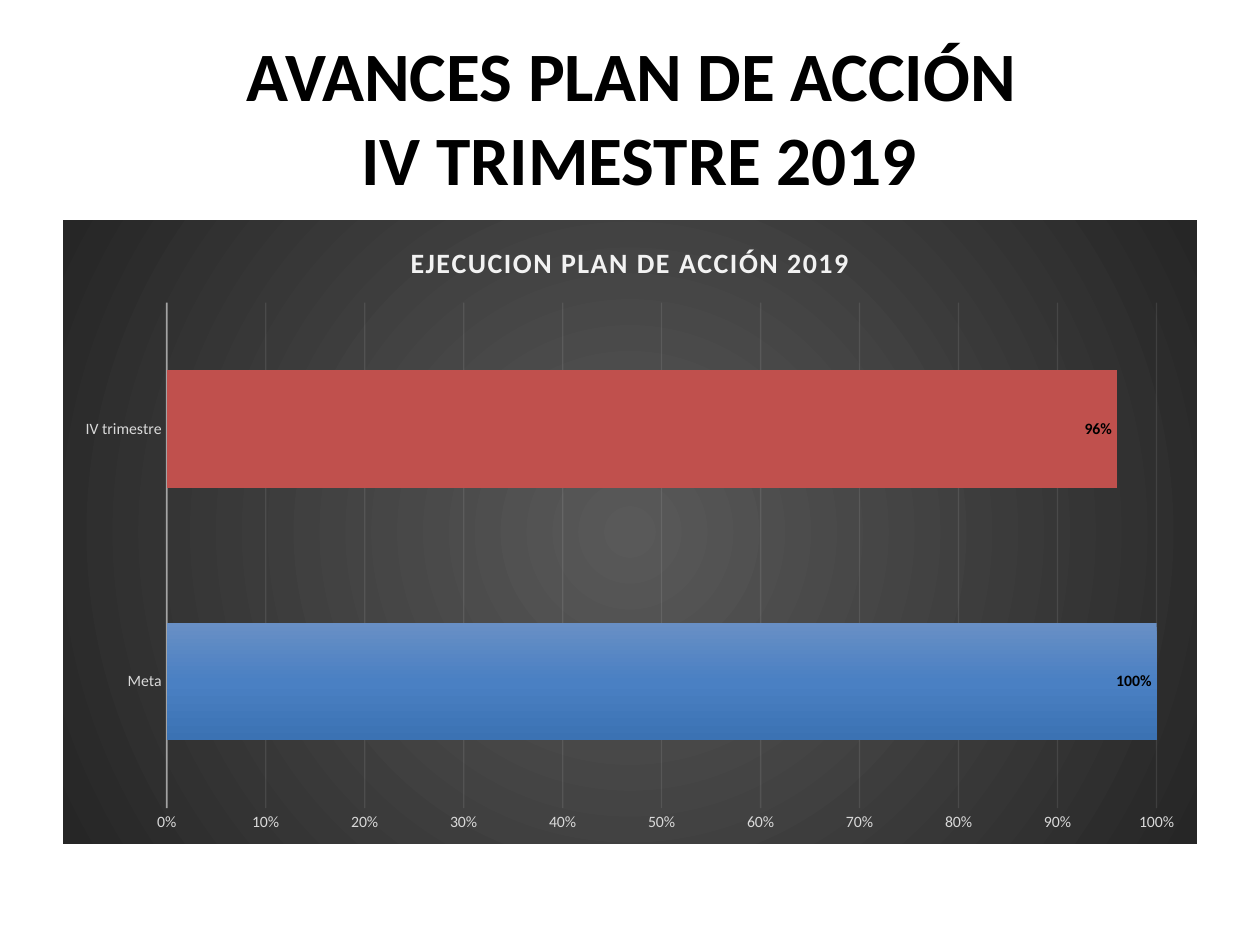
from typing import NamedTuple

from lxml.etree import Element, SubElement
from pptx import Presentation
from pptx.chart.data import CategoryChartData
from pptx.dml.color import RGBColor
from pptx.enum.chart import XL_CHART_TYPE as ChartType
from pptx.enum.chart import XL_LABEL_POSITION as LabelPosition
from pptx.enum.chart import XL_TICK_MARK as TickMark
from pptx.enum.text import MSO_ANCHOR as Anchor
from pptx.enum.text import PP_ALIGN as Align
from pptx.oxml import parse_xml
from pptx.oxml.ns import qn
from pptx.util import Inches, Pt

WIDTH, HEIGHT = Inches(10), Inches(7.5)
FONT = "Calibri"
BLACK, PALE, AXIS_TEXT, RED = "000000", "F2F2F2", "D9D9D9", "C0504D"


class Stop(NamedTuple):
    """A gradient colour at a percentage of the way."""

    percent: int
    color: str


class Box(NamedTuple):
    """A frame given as shares of the slide's size."""

    left: float
    top: float
    width: float
    height: float

    def lengths(self) -> tuple:
        """Return the frame in slide units."""
        sides = zip(self, (WIDTH, HEIGHT) * 2)
        return tuple(int(share * side) for share, side in sides)


TITLE_BOX = Box(0.169, 0.04, 0.677, 0.165)
CHART_BOX = Box(0.05, 0.233, 0.9, 0.66)
PROGRESS = {"Meta": 1, "IV trimestre": 0.96}
BACKDROP = [Stop(0, "595959"), Stop(100, "262626")]
GOAL_BLUE = [Stop(0, "688FC5"), Stop(50, "4A80C3"), Stop(100, "3B72B3")]


def rgb(color: str) -> RGBColor:
    """Turn a hex string into a colour."""
    return RGBColor.from_string(color)


def style_font(font, size: float, color: str, bold: bool = False) -> None:
    """Set the face, size, colour and weight of a font."""
    font.name, font.size, font.bold = FONT, Pt(size), bold
    font.color.rgb = rgb(color)


def write(frame, text: str, spacing: int = 0, **font_format) -> None:
    """Put formatted, centred text in a frame."""
    frame.text = text
    for paragraph in frame.paragraphs:
        paragraph.alignment = Align.CENTER
        for run in paragraph.runs:
            style_font(run.font, **font_format)
            run.font._element.set("spc", str(spacing))


def gradient(stops: list[Stop], radial: bool = False):
    """Build a gradient fill running downwards or out from the centre."""
    fill = Element(qn("a:gradFill"), rotWithShape="1")
    stop_list = SubElement(fill, qn("a:gsLst"))
    for stop in stops:
        mark = SubElement(stop_list, qn("a:gs"), pos=str(stop.percent * 1000))
        SubElement(mark, qn("a:srgbClr"), val=stop.color)
    if radial:
        circle = SubElement(fill, qn("a:path"), path="circle")
        SubElement(circle, qn("a:fillToRect"), dict.fromkeys("ltrb", "50000"))
    else:
        SubElement(fill, qn("a:lin"), ang="5400000", scaled="0")
    return fill


def style_line(line, width: float, color: str, opacity: int) -> None:
    """Draw a line of the given opacity in percent."""
    line.width = Pt(width)
    line.color.rgb = rgb(color)
    shade = line._get_or_add_ln().find(".//" + qn("a:srgbClr"))
    SubElement(shade, qn("a:alpha"), val=str(opacity * 1000))


def style_axes(chart) -> None:
    """Format the category and percentage axes."""
    categories, percentages = chart.category_axis, chart.value_axis
    for axis in (categories, percentages):
        axis.major_tick_mark = axis.minor_tick_mark = TickMark.NONE
        style_font(axis.tick_labels.font, 9, AXIS_TEXT)
    categories.has_major_gridlines = False
    style_line(categories.format.line, 1, PALE, 54)
    percentages.minimum_scale, percentages.maximum_scale = 0, 1
    percentages.major_unit = 0.1
    percentages.tick_labels.number_format = "0%"
    percentages.tick_labels.number_format_is_linked = False
    percentages.format.line.fill.background()
    style_line(percentages.major_gridlines.format.line, 0.75, PALE, 10)


def style_bars(plot) -> None:
    """Colour the bars and label them at their inner ends."""
    plot.gap_width, plot.overlap, plot.vary_by_categories = 115, -20, False
    execution = plot.series[0]
    execution._element.get_or_add_spPr().insert(0, gradient(GOAL_BLUE))
    quarter_fill = execution.points[1].format.fill
    quarter_fill.solid()
    quarter_fill.fore_color.rgb = rgb(RED)
    labels = execution.data_labels
    labels.show_value = True
    labels.position = LabelPosition.INSIDE_END
    labels.number_format, labels.number_format_is_linked = "0%", False
    style_font(labels.font, 9, BLACK, bold=True)


def add_progress_chart(slide, box: Box) -> None:
    """Add the bar chart of the plan's execution."""
    progress = CategoryChartData(number_format="0%")
    progress.categories = list(PROGRESS)
    progress.add_series("Series 1", list(PROGRESS.values()))
    chart = slide.shapes.add_chart(
        ChartType.BAR_CLUSTERED, *box.lengths(), progress
    ).chart
    chart.has_legend = False
    style_font(chart.font, 10, BLACK)
    write(chart.chart_title.text_frame, "EJECUCION PLAN DE ACCIÓN 2019",
          spacing=100, size=16, color=PALE, bold=True)
    chart.chart_title.include_in_layout = False
    style_axes(chart)
    style_bars(chart.plots[0])
    chart_space = chart._chartSpace
    backdrop = parse_xml(
        '<c:spPr xmlns:c="http://schemas.openxmlformats.org/drawingml/2006/chart"/>'
    )
    backdrop.append(gradient(BACKDROP, radial=True))
    border = SubElement(backdrop, qn("a:ln"))
    SubElement(border, qn("a:noFill"))
    chart_space.find(qn("c:chart")).addnext(backdrop)


def main() -> None:
    """Build the slide and save it."""
    deck = Presentation()
    deck.slide_width, deck.slide_height = WIDTH, HEIGHT
    slide = deck.slides.add_slide(deck.slide_layouts[5])
    heading = slide.shapes.title
    heading.left, heading.top, heading.width, heading.height = TITLE_BOX.lengths()
    heading.text_frame.vertical_anchor = Anchor.MIDDLE
    write(heading.text_frame, "AVANCES PLAN DE ACCIÓN \vIV TRIMESTRE 2019",
          size=39.6, color=BLACK, bold=True)
    add_progress_chart(slide, CHART_BOX)
    deck.save("out.pptx")


if __name__ == "__main__":
    main()
